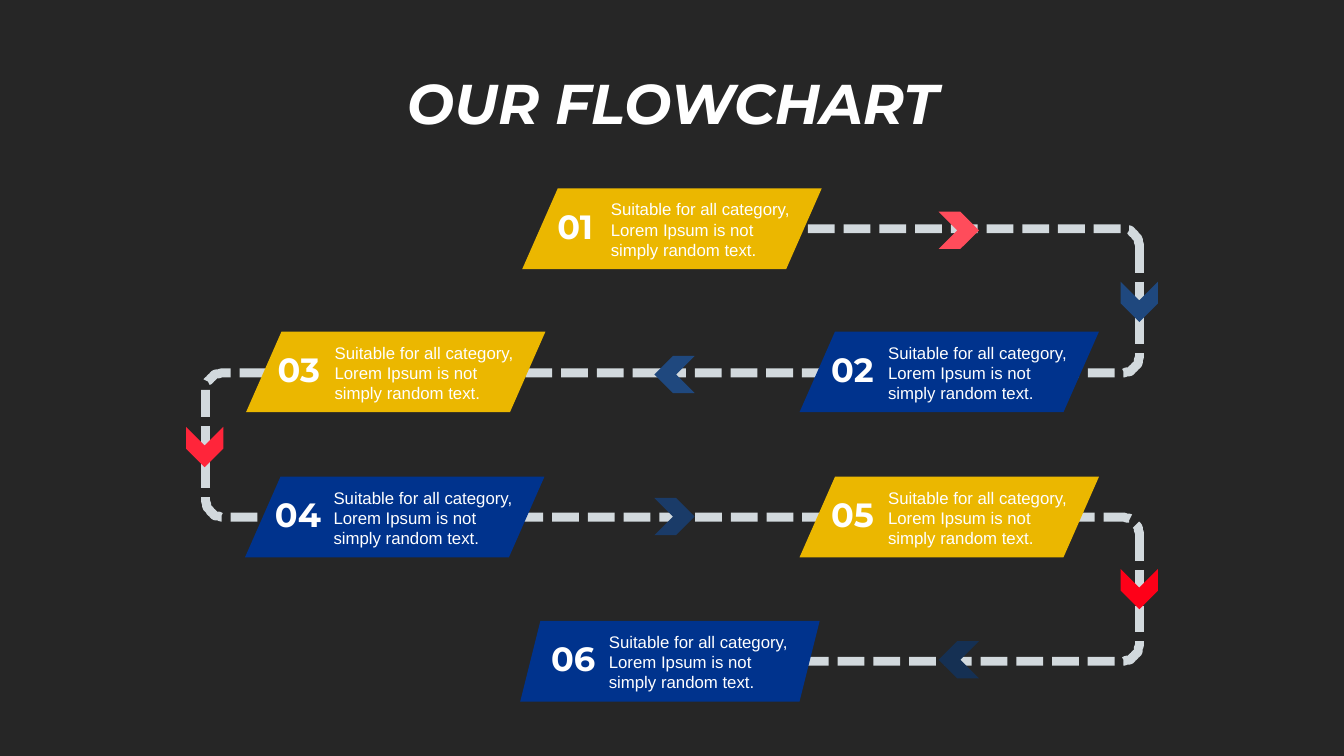
import math
from pptx import Presentation
from pptx import util as u
from pptx.dml.color import RGBColor
from pptx.enum import dml, shapes, text
from pptx.oxml import parse_xml
from pptx.oxml.ns import nsdecls

PX = 9144  # EMU per px, 100 px to the inch
THEME = {
    "background": "262626", "text": "FFFFFF", "track": "D2D9DD",
    "gold": "EBB700", "navy": "00338D",
    "heading_font": "Montserrat", "body_font": "Arial",
    "title_size": 40, "number_size": 24, "body_size": 12, "track_width": 6.38,
}


def write(shape, words, font_name, size, align, bold=False, italic=False):
    frame = shape.text_frame
    frame.word_wrap = True
    frame.vertical_anchor = text.MSO_ANCHOR.MIDDLE
    frame.text = words
    para = frame.paragraphs[0]
    para.alignment = align
    font = para.runs[0].font
    font.name, font.size, font.bold, font.italic = font_name, u.Pt(size), bold, italic
    font.color.rgb = RGBColor.from_string(THEME["text"])
    return frame


def style_track(line):
    line.color.rgb = RGBColor.from_string(THEME["track"])
    line.width = u.Pt(THEME["track_width"])
    line.dash_style = dml.MSO_LINE.SQUARE_DOT


# Slide and title
deck = Presentation()
deck.slide_width, deck.slide_height = 1333 * PX, 750 * PX
page = deck.slides.add_slide(deck.slide_layouts[5])
page.background.fill.solid()
page.background.fill.fore_color.rgb = RGBColor.from_string(THEME["background"])

title = page.shapes.title
title.left, title.top, title.width, title.height = 254 * PX, 70 * PX, 826 * PX, 71 * PX
frame = write(title, "OUR FLOWCHART", THEME["heading_font"], THEME["title_size"],
              text.PP_ALIGN.CENTER, bold=True, italic=True)
frame.paragraphs[0].line_spacing = 0.9
frame.auto_size = text.MSO_AUTO_SIZE.TEXT_TO_FIT_SHAPE

# Track: four rows joined at the left and right edges
LEFT, RIGHT, RADIUS = 204, 1130, 17
ROWS = [227 + 143 * row for row in range(4)]

# Rows with one rounded corner: edge x, row, inner end x, whether it starts inside
bends = [
    (RIGHT, 3, 654, False), (RIGHT, 2, 882, True), (RIGHT, 1, 649, False),
    (RIGHT, 0, 695, True), (LEFT, 2, 1060, False), (LEFT, 1, 654, True),
]
for edge, row, inner, starts_inside in bends:
    inward = 1 if inner > edge else -1
    # Inside-first bends turn down to the next row, the others come from above
    vertical = 1 if starts_inside else -1
    points = [(inner, ROWS[row])]
    for step in range(13):
        angle = math.pi / 2 * step / 12
        points.append((edge + inward * RADIUS * (1 - math.sin(angle)),
                       ROWS[row] + vertical * RADIUS * (1 - math.cos(angle))))
    if not starts_inside:
        points.reverse()
    builder = page.shapes.build_freeform(*points[0], scale=PX)
    builder.add_line_segments(points[1:], close=False)
    bend = builder.convert_to_shape()
    bend.shadow.inherit = False
    bend.fill.background()
    style_track(bend.line)

# Straight drops between rows
for edge, row in [(RIGHT, 0), (LEFT, 1), (RIGHT, 2)]:
    drop = page.shapes.add_connector(
        shapes.MSO_CONNECTOR.STRAIGHT, edge * PX, (ROWS[row] + RADIUS) * PX,
        edge * PX, (ROWS[row + 1] - RADIUS) * PX)
    style_track(drop.line)
    drop._element.spPr.append(parse_xml(f"<a:effectLst {nsdecls('a')}/>"))

# Direction chevrons: left, top, rotation, colour
chevrons = [
    (931, 210, 0, "FF4C5B"), (1110, 281, 90, "1F487E"), (649, 353, 180, "1F487E"),
    (183, 425, 90, "FF253A"), (1110, 566, 90, "FE0018"), (649, 494, 0, "1A3B68"),
    (931, 636, 180, "153053"),
]
for left, top, rotation, colour in chevrons:
    chevron = page.shapes.add_shape(shapes.MSO_SHAPE.CHEVRON,
                                    left * PX, top * PX, 40 * PX, 37 * PX)
    chevron.shadow.inherit = False
    chevron.rotation = rotation
    chevron.fill.solid()
    chevron.fill.fore_color.rgb = RGBColor.from_string(colour)
    chevron.line.fill.background()

# Steps: left, top, colour, slant
steps = [
    (518, 187, "gold", 0.44), (793, 329, "navy", 0.44), (244, 329, "gold", 0.44),
    (243, 473, "navy", 0.44), (793, 473, "gold", 0.44), (516, 616, "navy", 0.25),
]
for number, (left, top, colour, slant) in enumerate(steps, start=1):
    card = page.shapes.add_shape(shapes.MSO_SHAPE.PARALLELOGRAM,
                                 left * PX, top * PX, 297 * PX, 80 * PX)
    card.shadow.inherit = False
    card.adjustments[0] = slant
    card.fill.solid()
    card.fill.fore_color.rgb = RGBColor.from_string(THEME[colour])
    card.line.fill.background()

    label = page.shapes.add_textbox((left + 17) * PX, (top + 12) * PX, 71 * PX, 50 * PX)
    frame = write(label, f"{number:02d}", THEME["heading_font"], THEME["number_size"],
                  text.PP_ALIGN.CENTER, bold=True)
    frame.auto_size = text.MSO_AUTO_SIZE.SHAPE_TO_FIT_TEXT

    caption = page.shapes.add_textbox((left + 78) * PX, (top + 5) * PX, 202 * PX, 71 * PX)
    frame = write(caption, "Suitable for all category, Lorem Ipsum is not simply random text.",
                  THEME["body_font"], THEME["body_size"], text.PP_ALIGN.LEFT)
    frame.auto_size = text.MSO_AUTO_SIZE.SHAPE_TO_FIT_TEXT

deck.save("out.pptx")
